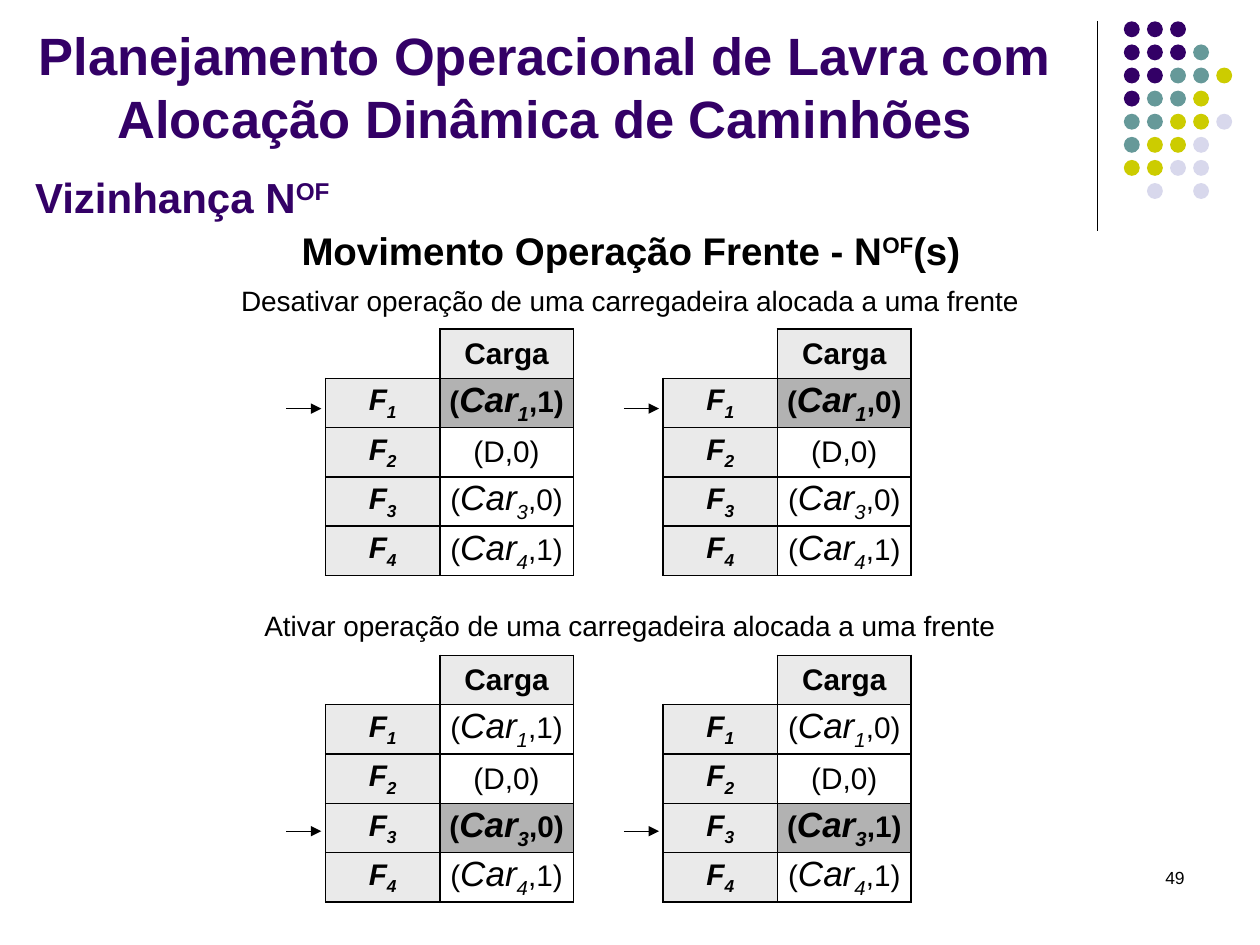
from lxml import etree
from pptx import Presentation
from pptx.dml.color import RGBColor
from pptx.enum.shapes import MSO_CONNECTOR, MSO_SHAPE
from pptx.enum.text import MSO_ANCHOR, PP_ALIGN
from pptx.oxml.ns import qn
from pptx.util import Pt

STRAIGHT = MSO_CONNECTOR.STRAIGHT
OVAL = MSO_SHAPE.OVAL
LEFT, CENTER, RIGHT = PP_ALIGN.LEFT, PP_ALIGN.CENTER, PP_ALIGN.RIGHT
TOP, MIDDLE = MSO_ANCHOR.TOP, MSO_ANCHOR.MIDDLE

FONT = "Arial"
COLORS = {
    "black": "000000",
    "purple": "330066",
    "teal": "669999",
    "olive": "CCCC00",
    "lilac": "D8D8EC",
    "header": "EAEAEA",
    "highlight": "B2B2B2",
}
DOT_COLORS = {"P": "purple", "T": "teal", "O": "olive", "L": "lilac"}
DOT_ROWS = ["PPP", "PPPT", "PPTTO", "PTTO", "TTOOL", "TOOL", "OOLL", " L L"]

ROW_HEIGHT = 28.2
COLUMN_WIDTHS = (65.3, 76.4)
TABLE_LEFTS = (186, 379)


def rgb(name):
    return RGBColor.from_string(COLORS[name])


def add_span(para, text, size, color="black", bold=False, italic=False, baseline=0):
    """Add one run; baseline is a shift in percent, negative for a subscript."""
    span = para.add_run()
    span.text = text
    font = span.font
    font.name, font.size, font.bold, font.italic = FONT, Pt(size), bold, italic
    font.color.rgb = rgb(color)
    if baseline:
        span._r.get_or_add_rPr().set("baseline", str(baseline * 1000))


def add_text(page, left, top, width, height, spans, size, color="black",
             bold=False, align=CENTER, anchor=TOP):
    """Add a text box; spans are (text, baseline) pairs."""
    box = page.shapes.add_textbox(Pt(left), Pt(top), Pt(width), Pt(height))
    frame = box.text_frame
    frame.word_wrap = True
    frame.vertical_anchor = anchor
    para = frame.paragraphs[0]
    para.alignment = align
    for text, baseline in spans:
        add_span(para, text, size, color, bold, baseline=baseline)


def add_line(page, x1, y1, x2, y2, arrow=False):
    line = page.shapes.add_connector(STRAIGHT, Pt(x1), Pt(y1), Pt(x2), Pt(y2))
    line.line.color.rgb = rgb("black")
    line.line.width = Pt(0.75)
    properties = line._element.spPr
    if arrow:
        etree.SubElement(properties.find(qn("a:ln")), qn("a:tailEnd"), type="triangle")
    etree.SubElement(properties, qn("a:effectLst"))


def add_dots(page):
    pitch, diameter = 13.2, 9.1
    for row, codes in enumerate(DOT_ROWS):
        for column, code in enumerate(codes):
            if code == " ":
                continue
            dot = page.shapes.add_shape(
                OVAL, Pt(642.2 + column * pitch), Pt(12.2 + row * pitch),
                Pt(diameter), Pt(diameter))
            dot.shadow.inherit = False
            dot.fill.solid()
            dot.fill.fore_color.rgb = rgb(DOT_COLORS[code])
            dot.line.fill.background()


def style_cell(cell, fill=None, sides="LRTB"):
    """Clear margins, draw 1 pt borders on the given sides, then fill."""
    cell.margin_left = cell.margin_right = cell.margin_top = cell.margin_bottom = 0
    cell.vertical_anchor = MIDDLE
    properties = cell._tc.get_or_add_tcPr()
    for side in "LRTB":
        border = etree.SubElement(properties, qn("a:ln" + side), w=str(Pt(1)))
        if side in sides:
            paint = etree.SubElement(border, qn("a:solidFill"))
            etree.SubElement(paint, qn("a:srgbClr"), val=COLORS["black"])
        else:
            etree.SubElement(border, qn("a:noFill"))
    if fill:
        cell.fill.solid()
        cell.fill.fore_color.rgb = rgb(fill)
    else:
        cell.fill.background()
    para = cell.text_frame.paragraphs[0]
    para.alignment = CENTER
    return para


def add_load_table(page, left, top, states, changed):
    """Table of fronts and loaders; states gives each front's flag, None if idle."""
    rows = len(states) + 1
    frame = page.shapes.add_table(rows, 2, Pt(left), Pt(top),
                                  Pt(sum(COLUMN_WIDTHS)), Pt(rows * ROW_HEIGHT))
    table = frame.table
    table.first_row = table.horz_banding = False
    for column, width in zip(table.columns, COLUMN_WIDTHS):
        column.width = Pt(width)
    for row in table.rows:
        row.height = Pt(ROW_HEIGHT)

    style_cell(table.cell(0, 0), sides="RB")
    add_span(style_cell(table.cell(0, 1), "header"), "Carga", 17, bold=True)
    for number, state in enumerate(states, 1):
        front = style_cell(table.cell(number, 0), "header")
        add_span(front, "F", 17, bold=True, italic=True)
        add_span(front, str(number), 17, bold=True, italic=True, baseline=-25)

        bold = number == changed
        load = style_cell(table.cell(number, 1), "highlight" if bold else None)
        if state is None:
            add_span(load, "(D,0)", 17)
            continue
        add_span(load, "(", 17, bold=bold)
        add_span(load, "Car", 20, bold=bold, italic=True)
        add_span(load, str(number), 20, bold=bold, italic=True, baseline=-25)
        add_span(load, f",{state})", 17, bold=bold)


def add_move(page, top, arrow_y, changed, before, after):
    """Tables before and after a move, each with an arrow at the changed front."""
    for left, states in zip(TABLE_LEFTS, (before, after)):
        add_load_table(page, left, top, states, changed)
        add_line(page, left - 22.5, arrow_y, left - 2.4, arrow_y, arrow=True)


def main():
    deck = Presentation()
    deck.slide_width, deck.slide_height = Pt(720), Pt(540)
    page = deck.slides.add_slide(deck.slide_layouts[6])

    add_line(page, 627, 12, 627, 132)
    add_dots(page)
    add_text(page, 516, 492, 168, 36, [("49", 0)], 10, align=RIGHT)

    add_move(page, 188, 233.5, 1, (1, None, 0, 1), (0, None, 0, 1))
    add_move(page, 374.5, 475, 3, (1, None, 0, 1), (0, None, 1, 1))

    add_text(page, 0, 158.4, 720, 31.7,
             [("Desativar operação de uma carregadeira alocada a uma frente", 0)], 16)
    add_text(page, 0, 344, 720, 26.6,
             [("Ativar operação de uma carregadeira alocada a uma frente", 0)], 16)
    add_text(page, 5, 126, 711, 41.8,
             [("Movimento Operação Frente - N", 0), ("OF", 30), ("(s)", 0)], 22, bold=True)
    add_text(page, 13, 94.3, 607, 44,
             [("Vizinhança N", 0), ("OF", 30)], 24, "purple", bold=True, align=LEFT)
    add_text(page, 14.4, 9.4, 594, 79.2,
             [("Planejamento Operacional de Lavra com Alocação Dinâmica de Caminhões", 0)],
             30, "purple", bold=True, anchor=MIDDLE)

    deck.save("out.pptx")


if __name__ == "__main__":
    main()
